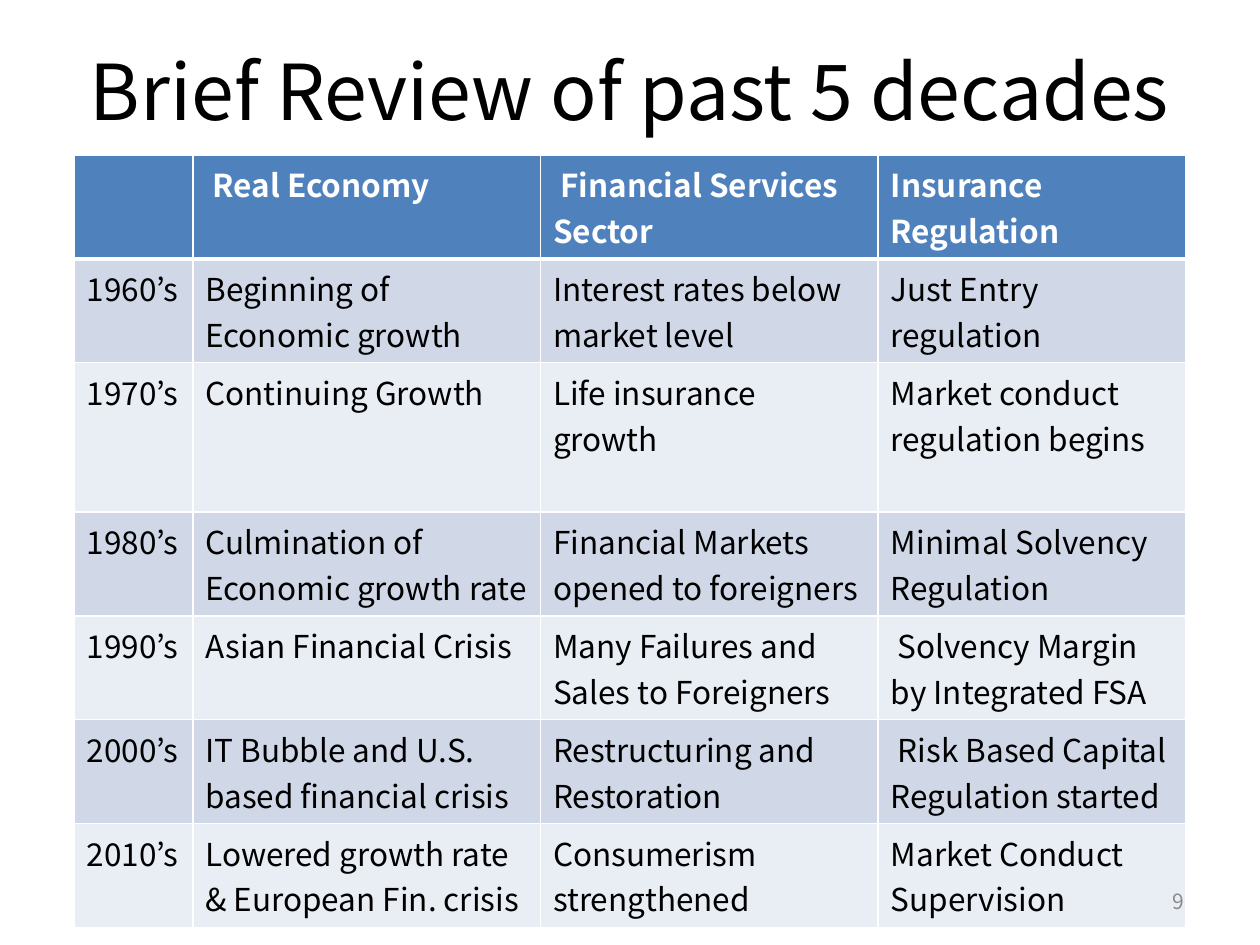
"""Build a slide with a table reviewing five decades of economy and insurance."""
from lxml.etree import SubElement
from pptx import Presentation
from pptx.dml.color import RGBColor
from pptx.enum.text import MSO_ANCHOR, PP_ALIGN
from pptx.oxml.ns import qn
from pptx.util import Pt

TITLE = "Brief Review of past 5 decades"
PAGE = "9"
ROWS = [
    ("", " Real Economy", " Financial Services Sector", "Insurance Regulation"),
    ("1960’s", "Beginning of Economic growth", "Interest rates below market level", "Just Entry regulation"),
    ("1970’s", "Continuing Growth", "Life insurance growth", "Market conduct regulation begins"),
    ("1980’s", "Culmination of Economic growth rate", "Financial Markets opened to foreigners",
     "Minimal Solvency Regulation"),
    ("1990’s", "Asian Financial Crisis", "Many Failures and Sales to Foreigners",
     " Solvency Margin by Integrated FSA"),
    ("2000’s", "IT Bubble and U.S. based financial crisis", "Restructuring and Restoration",
     " Risk Based Capital Regulation started"),
    ("2010’s", "Lowered growth rate & European Fin. crisis", "Consumerism strengthened",
     "Market Conduct Supervision"),
]
COL_WIDTHS = [67.7, 198.7, 193, 175.7]
ROW_HEIGHT = 51.84
TALL_ROWS = {2: 85.3}
FONT = "Noto Sans CJK KR"
COLORS = {"header": "4F81BD", "odd": "D0D8E8", "even": "E9EDF4",
          "white": "FFFFFF", "text": "000000", "page": "8C8C8C"}


def style(tf, size, color, bold=False, align=PP_ALIGN.LEFT):
    for p in tf.paragraphs:
        p.alignment = align
        for r in p.runs:
            r.font.name = FONT
            r.font.size = Pt(size)
            r.font.bold = bold
            r.font.color.rgb = RGBColor.from_string(COLORS[color])


def add_text(s, box, text, size, color, align, anchor):
    tf = s.shapes.add_textbox(*map(Pt, box)).text_frame
    tf.word_wrap = True
    tf.vertical_anchor = anchor
    tf.text = text
    style(tf, size, color, align=align)


def add_borders(cell, top, bottom):
    tcPr = cell._tc.get_or_add_tcPr()
    for side, width in (("L", 1), ("R", 1), ("T", top), ("B", bottom)):
        ln = SubElement(tcPr, qn(f"a:ln{side}"), w=str(Pt(width)))
        fill = SubElement(ln, qn("a:solidFill"))
        SubElement(fill, qn("a:srgbClr"), val=COLORS["white"])


def add_table(s, left, top):
    heights = [TALL_ROWS.get(i, ROW_HEIGHT) for i in range(len(ROWS))]
    table = s.shapes.add_table(len(ROWS), len(COL_WIDTHS), Pt(left), Pt(top),
                               Pt(sum(COL_WIDTHS)), Pt(sum(heights))).table
    for col, width in zip(table.columns, COL_WIDTHS):
        col.width = Pt(width)
    for i, (row, texts) in enumerate(zip(table.rows, ROWS)):
        row.height = Pt(heights[i])
        header = i == 0
        band = "header" if header else "odd" if i % 2 else "even"
        for cell, text in zip(row.cells, texts):
            cell.text = text
            style(cell.text_frame, 18, "white" if header else "text", bold=header)
            add_borders(cell, 3 if i == 1 else 1, 3 if header else 1)
            cell.fill.solid()
            cell.fill.fore_color.rgb = RGBColor.from_string(COLORS[band])


def main():
    prs = Presentation()
    prs.slide_width, prs.slide_height = Pt(720), Pt(540)
    s = prs.slides.add_slide(prs.slide_layouts[6])
    add_table(s, 42.5, 88.6)
    add_text(s, (36, 21.6, 648, 90), TITLE, 44, "text", PP_ALIGN.CENTER, MSO_ANCHOR.TOP)
    add_text(s, (516, 500.5, 168, 28.75), PAGE, 12, "page", PP_ALIGN.RIGHT, MSO_ANCHOR.MIDDLE)
    prs.save("out.pptx")


if __name__ == "__main__":
    main()
